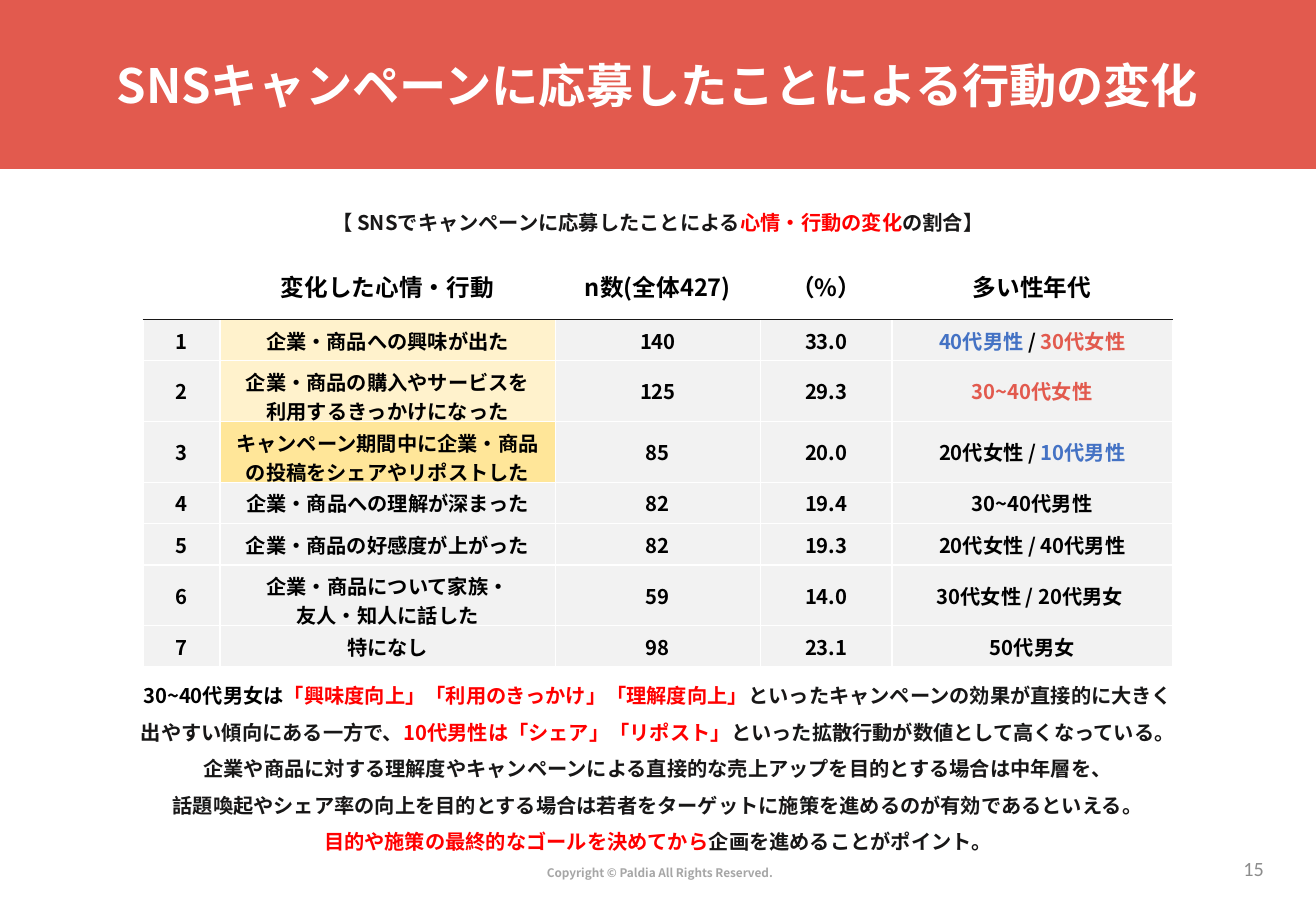
import pptx
import pptx.util
import pptx.dml.color
import pptx.enum.shapes
import pptx.enum.text
import pptx.oxml
import pptx.oxml.ns

FONT = "Noto Sans CJK JP"
WHITE, BLACK, INK, GREY = "FFFFFF", "000000", "181717", "F2F2F2"
CORAL, RED, BLUE = "E25A4E", "FF0000", "4472C4"
LIGHT_YELLOW, YELLOW = "FFF2CC", "FFE699"
CENTER = pptx.enum.text.PP_ALIGN.CENTER
RIGHT = pptx.enum.text.PP_ALIGN.RIGHT
MIDDLE = pptx.enum.text.MSO_ANCHOR.MIDDLE

HEADER = ["", "変化した心情・行動", "n数(全体427)", "（%）", "多い性年代"]
ROWS = [
    [["企業・商品への興味が出た"], "140", "33.0",
     [("40代男性 ", BLUE), ("/ ", BLACK), ("30代女性", CORAL)]],
    [["企業・商品の購入やサービスを", "利用するきっかけになった"], "125", "29.3",
     [("30~40代女性", CORAL)]],
    [["キャンペーン期間中に企業・商品の投稿をシェアやリポストした"], "85", "20.0",
     [("20代女性 / ", BLACK), ("10代男性", BLUE)]],
    [["企業・商品への理解が深まった"], "82", "19.4", [("30~40代男性", BLACK)]],
    [["企業・商品の好感度が上がった"], "82", "19.3", [("20代女性 / 40代男性", BLACK)]],
    [["企業・商品について家族・", "友人・知人に話した"], "59", "14.0",
     [("30代女性 / 20代男女 ", BLACK)]],
    [["特になし"], "98", "23.1", [("50代男女", BLACK)]],
]
ACTION_FILLS = {1: LIGHT_YELLOW, 2: LIGHT_YELLOW, 3: YELLOW}

CAPTION = [[("【 SNSでキャンペーンに応募したことによる", INK),
            ("心情・行動の変化", RED), ("の割合】", INK)]]
SUMMARY = [
    [("30~40代男女は", BLACK), ("「興味度向上」「利用のきっかけ」「理解度向上」", RED),
     ("といったキャンペーンの効果が直接的に大きく", INK)],
    [("出やすい傾向にある一方で、", INK), ("10代男性は「シェア」「リポスト」", RED),
     ("といった拡散行動が数値として高くなっている。", INK)],
    [("企業や商品に対する理解度やキャンペーンによる直接的な売上アップを目的とする場合は中年層を、", INK)],
    [("話題喚起やシェア率の向上を目的とする場合は若者をターゲットに施策を進めるのが有効であるといえる。", INK)],
    [("目的や施策の最終的なゴールを決めてから", RED), ("企画を進めることがポイント。", INK)],
]


def px(length):
    return pptx.util.Inches(length / 100)


def color(value):
    return pptx.dml.color.RGBColor.from_string(value)


class SlideBuilder:
    """Holds the text style and the current slide, and draws its elements."""

    def __init__(self, presentation):
        self.slide = presentation.slides.add_slide(presentation.slide_layouts[5])
        self.style = {"name": FONT, "size": 12, "bold": True}

    def fill_text(self, frame, paragraphs, alignment=CENTER, spacing=1.0, **changes):
        style = {**self.style, **changes}
        style["size"] = pptx.util.Pt(style["size"])
        for index, runs in enumerate(paragraphs):
            paragraph = frame.add_paragraph() if index else frame.paragraphs[0]
            layout = {"alignment": alignment, "line_spacing": spacing}
            for name, value in layout.items():
                setattr(paragraph, name, value)
            for text, value in runs:
                run = paragraph.add_run()
                run.text = text
                for name, setting in style.items():
                    setattr(run.font, name, setting)
                run.font.color.rgb = color(value)
                east_asian = pptx.oxml.parse_xml(
                    f'<a:ea {pptx.oxml.ns.nsdecls("a")} typeface="{style["name"]}"/>')
                run.font._element.append(east_asian)

    def place(self, shape, box):
        for name, length in zip(("left", "top", "width", "height"), box):
            setattr(shape, name, px(length))

    def banner(self, box, fill):
        kind = pptx.enum.shapes.MSO_SHAPE.RECTANGLE
        shape = self.slide.shapes.add_shape(kind, *map(px, box))
        shape.shadow.inherit = False
        shape.fill.solid()
        shape.fill.fore_color.rgb = color(fill)
        shape.line.fill.background()
        self.slide.shapes._spTree.insert(2, shape._element)

    def title(self, box, text):
        shape = self.slide.shapes.title
        self.place(shape, box)
        frame = shape.text_frame
        settings = {"word_wrap": True, "vertical_anchor": MIDDLE,
                    "auto_size": pptx.enum.text.MSO_AUTO_SIZE.NONE}
        for name, value in settings.items():
            setattr(frame, name, value)
        self.fill_text(frame, [[(text, WHITE)]], spacing=0.9, size=28)

    def text(self, box, paragraphs, anchor=pptx.enum.text.MSO_ANCHOR.TOP, **formats):
        frame = self.slide.shapes.add_textbox(*map(px, box)).text_frame
        frame.word_wrap = True
        frame.vertical_anchor = anchor
        self.fill_text(frame, paragraphs, **formats)

    def cell(self, cell, paragraphs, fill, top=WHITE, bottom=WHITE, **formats):
        properties = cell._tc.get_or_add_tcPr()
        for side, value in zip("LRTB", (WHITE, WHITE, top, bottom)):
            properties.append(pptx.oxml.parse_xml(
                f'<a:ln{side} {pptx.oxml.ns.nsdecls("a")} w="12700"><a:solidFill>'
                f'<a:srgbClr val="{value}"/></a:solidFill></a:ln{side}>'))
        cell.fill.solid()
        cell.fill.fore_color.rgb = color(fill)
        cell.vertical_anchor = MIDDLE
        self.fill_text(cell.text_frame, paragraphs, **formats)

    def table(self, box, widths, header_height, row_height):
        shape = self.slide.shapes.add_table(len(ROWS) + 1, len(widths), *map(px, box))
        table = shape.table
        table.first_row = table.horz_banding = False
        for column, width in zip(table.columns, widths):
            column.width = px(width)
        for index, row in enumerate(table.rows):
            row.height = px(row_height if index else header_height)
        self.place(shape, box)
        for column, text in enumerate(HEADER):
            runs = [(text, BLACK)] if text else []
            self.cell(table.cell(0, column), [runs], WHITE, bottom=INK, size=14)
        for number, (action, count, percent, groups) in enumerate(ROWS, 1):
            contents = [[[(str(number), BLACK)]],
                        [[(line, BLACK)] for line in action],
                        [[(count, BLACK)]], [[(percent, BLACK)]], [groups]]
            for column, paragraphs in enumerate(contents):
                fill = ACTION_FILLS.get(number, GREY) if column == 1 else GREY
                self.cell(table.cell(number, column), paragraphs, fill,
                          top=INK if number == 1 else WHITE)


def main():
    presentation = pptx.Presentation()
    presentation.slide_width, presentation.slide_height = px(1083), px(750)
    builder = SlideBuilder(presentation)
    builder.banner((0, 0, 1083, 139), CORAL)
    builder.text((272, 708, 542, 22),
                 [[("Copyright © Paldia All Rights Reserved.", "A6A6A6")]], size=7)
    builder.title((74, 31, 934, 84), "SNSキャンペーンに応募したことによる行動の変化")
    builder.text((109, 158, 865, 38), CAPTION, spacing=1.5)
    builder.table((118, 208, 847, 340), (63, 276, 169, 108, 231), 55, 34)
    builder.text((45, 548, 993, 159), SUMMARY, spacing=1.5)
    builder.text((806, 695, 244, 40), [[("15", "8C8C8C")]], anchor=MIDDLE,
                 alignment=RIGHT, name="Calibri", bold=False)
    presentation.save("out.pptx")


if __name__ == "__main__":
    main()
